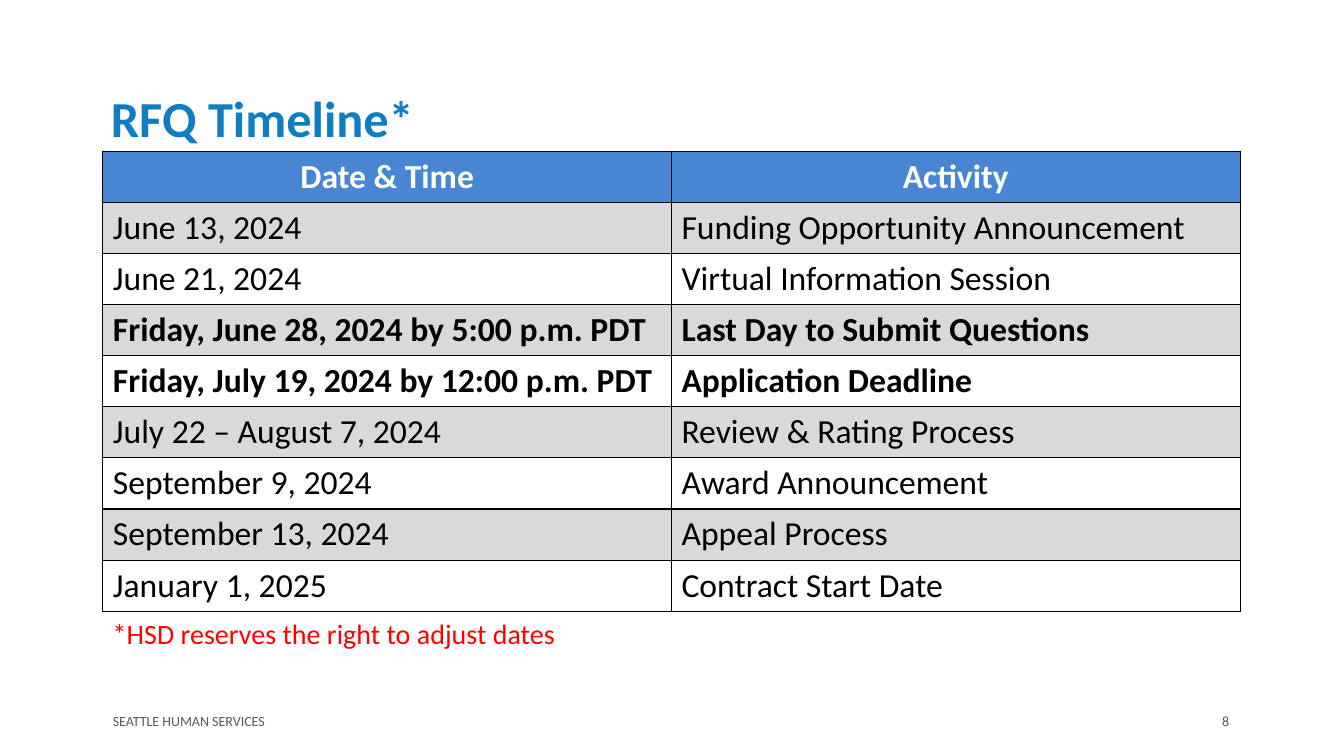
from lxml import etree
from pptx import Presentation
from pptx.dml.color import RGBColor
from pptx.enum import text as text_enum
from pptx.oxml import ns
from pptx.util import Inches, Pt

FONT = "Calibri"
COLORS = {
    "title": "0F7DC0",
    "header": "4886D3",
    "band": "D9D9D9",
    "white": "FFFFFF",
    "black": "000000",
    "note": "FF0000",
    "footer": "595959",
}
HEADINGS = ("Date & Time", "Activity")
TIMELINE = [
    ("June 13, 2024", "Funding Opportunity Announcement"),
    ("June 21, 2024", "Virtual Information Session"),
    ("Friday, June 28, 2024 by 5:00 p.m. PDT", "Last Day to Submit Questions"),
    ("Friday, July 19, 2024 by 12:00 p.m. PDT", "Application Deadline"),
    ("July 22 – August 7, 2024", "Review & Rating Process"),
    ("September 9, 2024", "Award Announcement"),
    ("September 13, 2024", "Appeal Process"),
    ("January 1, 2025", "Contract Start Date"),
]
DEADLINE_ROWS = (3, 4)
LEFT, CENTER, RIGHT = (
    text_enum.PP_ALIGN.LEFT,
    text_enum.PP_ALIGN.CENTER,
    text_enum.PP_ALIGN.RIGHT,
)


def color(name):
    return RGBColor.from_string(COLORS[name])


def write(text_frame, words, size, color_name, bold=False, align=LEFT):
    text_frame.text = words
    paragraph = text_frame.paragraphs[0]
    paragraph.alignment = align
    font = paragraph.runs[0].font
    font.name = FONT
    font.size = Pt(size)
    font.bold = bold
    font.color.rgb = color(color_name)


def add_title(slide, left, top, width, height):
    title = slide.shapes.title
    title.left, title.top = Inches(left), Inches(top)
    title.width, title.height = Inches(width), Inches(height)
    title.text_frame.vertical_anchor = text_enum.MSO_ANCHOR.BOTTOM
    title.text_frame.word_wrap = True
    write(title.text_frame, "RFQ Timeline*", 36, "title", bold=True)


def add_label(slide, box, words, size, color_name, align=LEFT,
              anchor=text_enum.MSO_ANCHOR.TOP):
    shape = slide.shapes.add_textbox(*map(Inches, box))
    shape.text_frame.word_wrap = True
    shape.text_frame.vertical_anchor = anchor
    write(shape.text_frame, words, size, color_name, align=align)


def add_borders(cell):
    properties = cell._tc.get_or_add_tcPr()
    for side in ("a:lnL", "a:lnR", "a:lnT", "a:lnB"):
        line = etree.SubElement(properties, ns.qn(side), w=str(Pt(1)))
        fill = etree.SubElement(line, ns.qn("a:solidFill"))
        etree.SubElement(fill, ns.qn("a:srgbClr"), val=COLORS["black"])


def add_timeline(slide, left, top, width, height):
    rows = [HEADINGS] + TIMELINE
    frame = slide.shapes.add_table(
        len(rows), len(HEADINGS),
        Inches(left), Inches(top), Inches(width), Inches(height))
    for row_index, row in enumerate(rows):
        is_header = row_index == 0
        if is_header:
            fill_name = "header"
        else:
            fill_name = "band" if row_index % 2 else "white"
        for column_index, words in enumerate(row):
            cell = frame.table.cell(row_index, column_index)
            add_borders(cell)
            cell.fill.solid()
            cell.fill.fore_color.rgb = color(fill_name)
            write(cell.text_frame, words, 24,
                  "white" if is_header else "black",
                  bold=is_header or row_index in DEADLINE_ROWS,
                  align=CENTER if is_header else LEFT)


def add_footer(slide, left, top, width, height):
    middle = text_enum.MSO_ANCHOR.MIDDLE
    number_width = 3.11
    number_left = left + width - number_width
    add_label(slide, (left, top, 4.22, height), "SEATTLE HUMAN SERVICES",
              10, "footer", anchor=middle)
    add_label(slide, (number_left, top, number_width, height), "8",
              10, "footer", align=RIGHT, anchor=middle)


def main():
    presentation = Presentation()
    presentation.slide_width = Inches(13.33)
    presentation.slide_height = Inches(7.5)
    slide = presentation.slides.add_slide(presentation.slide_layouts[5])
    add_title(slide, 1, 0.81, 11.29, 0.7)
    add_timeline(slide, 1.02, 1.5, 11.28, 4.5)
    add_label(slide, (1.02, 6.07, 6.67, 0.44),
              "*HSD reserves the right to adjust dates", 20, "note")
    add_footer(slide, 1.02, 6.95, 11.27, 0.4)
    presentation.save("out.pptx")


if __name__ == "__main__":
    main()
